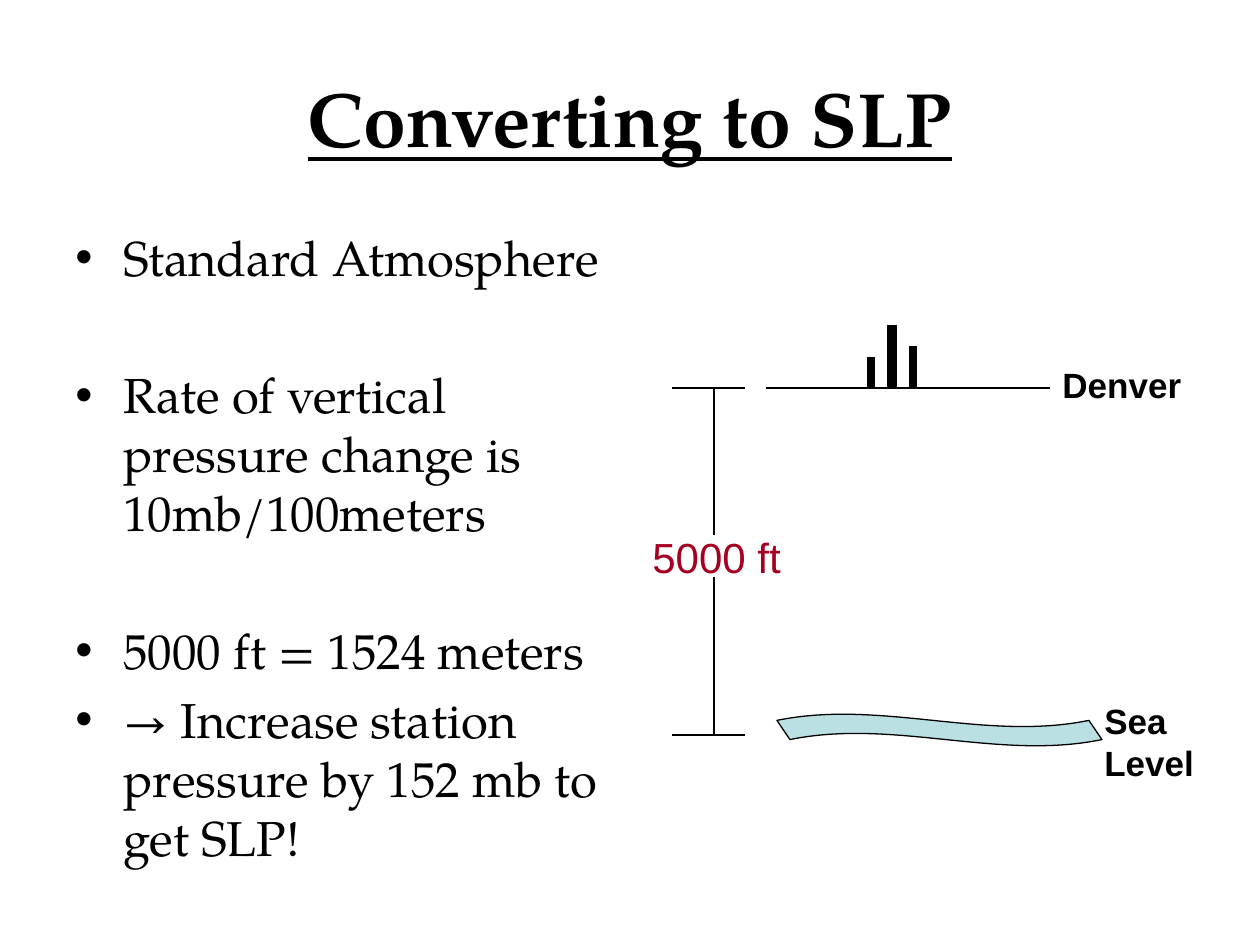
from lxml.etree import SubElement
from pptx import Presentation
from pptx.dml.color import RGBColor
from pptx.enum.shapes import MSO_CONNECTOR, MSO_SHAPE
from pptx.enum.text import MSO_ANCHOR, PP_ALIGN
from pptx.oxml.ns import qn
from pptx.util import Pt

EMU_PER_PX = 914400 / 126
BLACK = RGBColor(0x00, 0x00, 0x00)
RED = RGBColor(0xA5, 0x00, 0x21)
WATER = RGBColor(0xBB, 0xE0, 0xE3)
SERIF, SANS = "TeX Gyre Pagella", "Arial"

# Content
TITLE = "Converting to SLP"
BULLETS = [  # text, space before in points
    ("Standard Atmosphere", 6),
    ("Rate of vertical pressure change is 10mb/100meters", 45),
    ("5000 ft = 1524 meters", 45),
    ("→ Increase station pressure by 152 mb to get SLP!", 6),
]
LABELS = [  # text, box, format
    ("Sea Level", (1092, 693, 136, 97), dict(size=20, bold=True)),
    ("Denver", (1050, 357, 147, 54), dict(size=20, bold=True)),
    ("5000 ft", (640, 525, 158, 63), dict(size=24, color=RED)),
]
DENVER_Y, SEA_Y = 388, 735
BUILDINGS = [(871, 357, 4.5), (892, 325, 6), (913, 346, 4.5)]  # x, top, width
SCALE_X, SCALE_ENDS = 714, (672, 745)
LABEL_GAP = (535, 577)
INDENT = 48


def px(value):
    return round(value * EMU_PER_PX)


def place(shape, box):
    shape.left, shape.top, shape.width, shape.height = map(px, box)


def write(paragraph, text, size=28, font=SANS, color=BLACK, bold=False,
          underline=False, align=PP_ALIGN.LEFT, before=0, bullet=False):
    paragraph.alignment = align
    paragraph.space_before = Pt(before)
    run = paragraph.add_run()
    run.text = text
    run.font.size, run.font.name = Pt(size), font
    run.font.bold, run.font.underline = bold, underline
    run.font.color.rgb = color
    if bullet:
        properties = paragraph._p.get_or_add_pPr()
        properties.set("marL", str(px(INDENT)))
        properties.set("indent", str(-px(INDENT)))
        SubElement(properties, qn("a:buFont")).set("typeface", SANS)
        SubElement(properties, qn("a:buChar")).set("char", "•")


def add_text_box(slide, box):
    frame = slide.shapes.add_textbox(*map(px, box)).text_frame
    frame.word_wrap = True
    return frame


def add_line(slide, x1, y1, x2, y2, width=0.75):
    line = slide.shapes.add_connector(
        MSO_CONNECTOR.STRAIGHT, *map(px, (x1, y1, x2, y2)))
    line.line.color.rgb = BLACK
    line.line.width = Pt(width)
    SubElement(line._element.spPr, qn("a:effectLst"))


def main():
    presentation = Presentation()
    presentation.slide_width, presentation.slide_height = px(1260), px(945)
    slide = presentation.slides.add_slide(presentation.slide_layouts[5])

    # Title
    title = slide.shapes.title
    place(title, (63, 38, 1134, 158))
    title.text_frame.vertical_anchor = MSO_ANCHOR.MIDDLE
    write(title.text_frame.paragraphs[0], TITLE, size=44, font=SERIF,
          bold=True, underline=True, align=PP_ALIGN.CENTER)

    # Bullets
    frame = add_text_box(slide, (63, 221, 557, 624))
    for index, (text, before) in enumerate(BULLETS):
        paragraph = frame.add_paragraph() if index else frame.paragraphs[0]
        write(paragraph, text, font=SERIF, before=before, bullet=True)

    # Sea surface
    sea = slide.shapes.add_shape(MSO_SHAPE.WAVE, *map(px, (777, 714, 325, 32)))
    sea.shadow.inherit = False
    sea.adjustments[0], sea.adjustments[1] = 0.206, 0.02
    sea.fill.solid()
    sea.fill.fore_color.rgb = WATER
    sea.line.color.rgb = BLACK
    sea.line.width = Pt(0.75)

    # Denver ground and skyline
    add_line(slide, 766, DENVER_Y, 1050, DENVER_Y)
    for x, top, width in BUILDINGS:
        add_line(slide, x, DENVER_Y, x, top, width)

    # Height scale, open around its label
    for y, gap_y in zip((DENVER_Y, SEA_Y), LABEL_GAP):
        add_line(slide, SCALE_ENDS[1], y, SCALE_ENDS[0], y)
        add_line(slide, SCALE_X, gap_y, SCALE_X, y)

    # Labels
    for text, box, style in LABELS:
        write(add_text_box(slide, box).paragraphs[0], text, **style)

    presentation.save("out.pptx")


if __name__ == "__main__":
    main()
